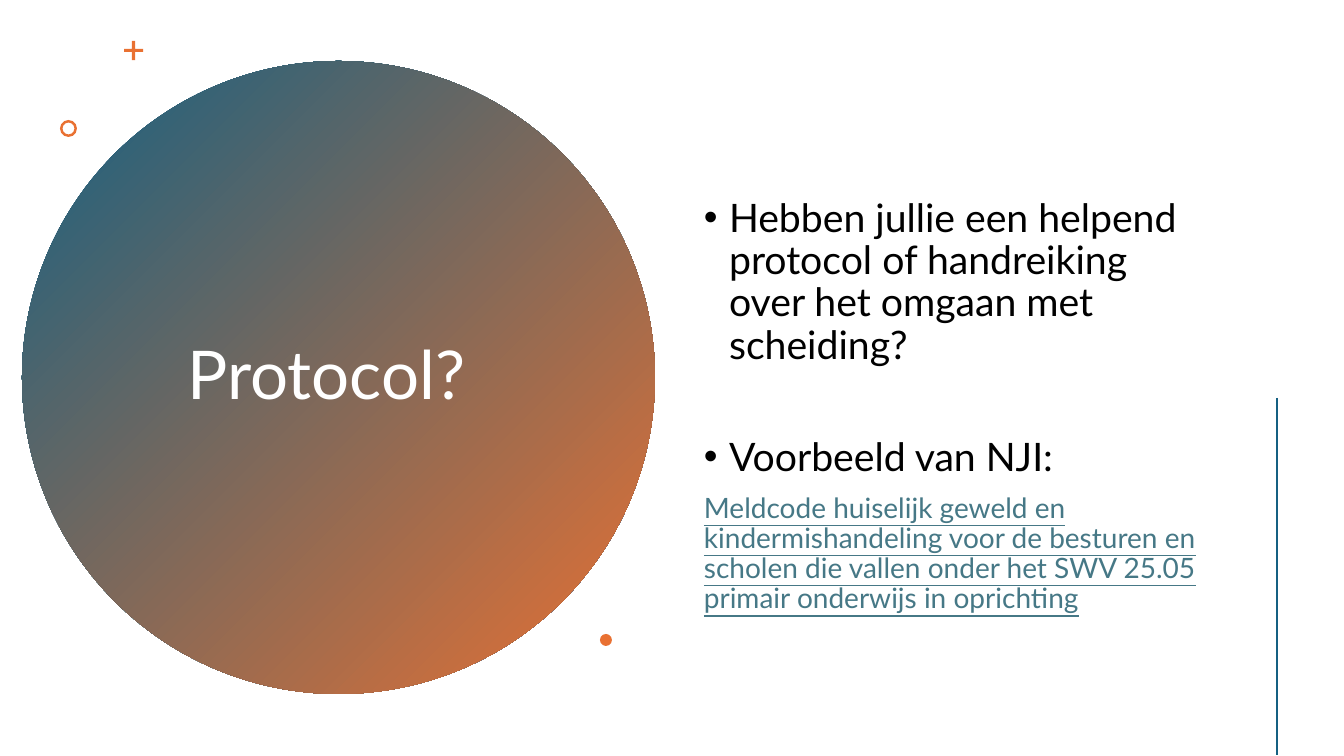
from pptx import Presentation
from pptx import util as u
from pptx.dml.color import RGBColor
from pptx.enum import shapes, text
from pptx.oxml.ns import qn
from lxml import etree

PX = 914400 / 100.8
HUES = {"blue": "156082", "orange": "E97132", "link": "467886",
        "white": "FFFFFF", "black": "000000"}
KIND = shapes.MSO_SHAPE


def px(*nums):
    return [round(n * PX) for n in nums]


def hue(name):
    return RGBColor.from_string(HUES[name])


def draw(slide, kind, box):
    """Add a preset shape without outline or shadow."""
    shape = slide.shapes.add_shape(kind, *px(*box))
    shape.shadow.inherit = False
    shape.line.fill.background()
    return shape


def frame(slide, box):
    """Add a wrapping, vertically centred text box."""
    area = slide.shapes.add_textbox(*px(*box)).text_frame
    area.word_wrap = True
    area.vertical_anchor = text.MSO_ANCHOR.MIDDLE
    return area


def write(para, words, size, tint, **form):
    para.line_spacing = 0.9
    run = para.add_run()
    run.text = words
    look = {"name": "Lato", "size": u.Pt(size), **form}
    for key, val in look.items():
        setattr(run.font, key, val)
    run.font.color.rgb = hue(tint)


def bullet(para):
    props = para._p.get_or_add_pPr()
    props.set("marL", str(u.Inches(0.25)))
    props.set("indent", str(-u.Inches(0.25)))
    font = etree.SubElement(props, qn("a:buFont"))
    font.set("typeface", "Arial")
    etree.SubElement(props, qn("a:buChar")).set("char", "•")


def disc(slide, box):
    """Place the gradient circle and the title on it."""
    x, y, w, h = box
    fill = draw(slide, KIND.OVAL, box).fill
    fill.gradient()
    fill.gradient_angle = 315
    for stop, name, spot in zip(fill.gradient_stops, ("blue", "orange"), (0, 1)):
        stop.color.rgb = hue(name)
        stop.position = spot
    para = frame(slide, (x + 92, y + 81, 425, 471)).paragraphs[0]
    para.alignment = text.PP_ALIGN.CENTER
    write(para, "Protocol?", 48, "white")


def marks(slide, box):
    """Place the small orange marks around the circle."""
    x, y, w, h = box
    for kind, dx, dy, side, adj in (
            (KIND.CROSS, 102, -20, 19, 0.42),
            (KIND.DONUT, 38, 59, 17, 0.15),
            (KIND.OVAL, 578, 573, 12, None)):
        mark = draw(slide, kind, (x + dx, y + dy, side, side))
        mark.fill.solid()
        mark.fill.fore_color.rgb = hue("orange")
        if adj:
            mark.adjustments[0] = adj


def body(slide, box):
    area = frame(slide, box)
    items = (
        ("Hebben jullie een helpend protocol of handreiking over het "
         "omgaan met scheiding?", 0),
        ("Voorbeeld van NJI:", 50))
    for i, (words, gap) in enumerate(items):
        para = area.add_paragraph() if i else area.paragraphs[0]
        bullet(para)
        para.space_before = u.Pt(gap)
        write(para, words, 28, "black")
    para = area.add_paragraph()
    para.space_before = u.Pt(10)
    write(para, "Meldcode huiselijk geweld en kindermishandeling voor de "
          "besturen en scholen die vallen onder het SWV 25.05 primair "
          "onderwijs in oprichting", 20, "link", underline=True)


def rule(slide, x, top, end):
    line = slide.shapes.add_connector(
        shapes.MSO_CONNECTOR.STRAIGHT, *px(x, top, x, end))
    line.line.color.rgb = hue("blue")
    line.line.width = u.Pt(2)
    etree.SubElement(line._element.spPr, qn("a:effectLst"))


def main():
    deck = Presentation()
    deck.slide_width, deck.slide_height = px(1344, 756)
    slide = deck.slides.add_slide(deck.slide_layouts[6])
    circle = (22, 61, 633, 633)
    disc(slide, circle)
    marks(slide, circle)
    body(slide, (694, 113, 526, 587))
    rule(slide, 1277, 398, 755)
    deck.save("out.pptx")


if __name__ == "__main__":
    main()
